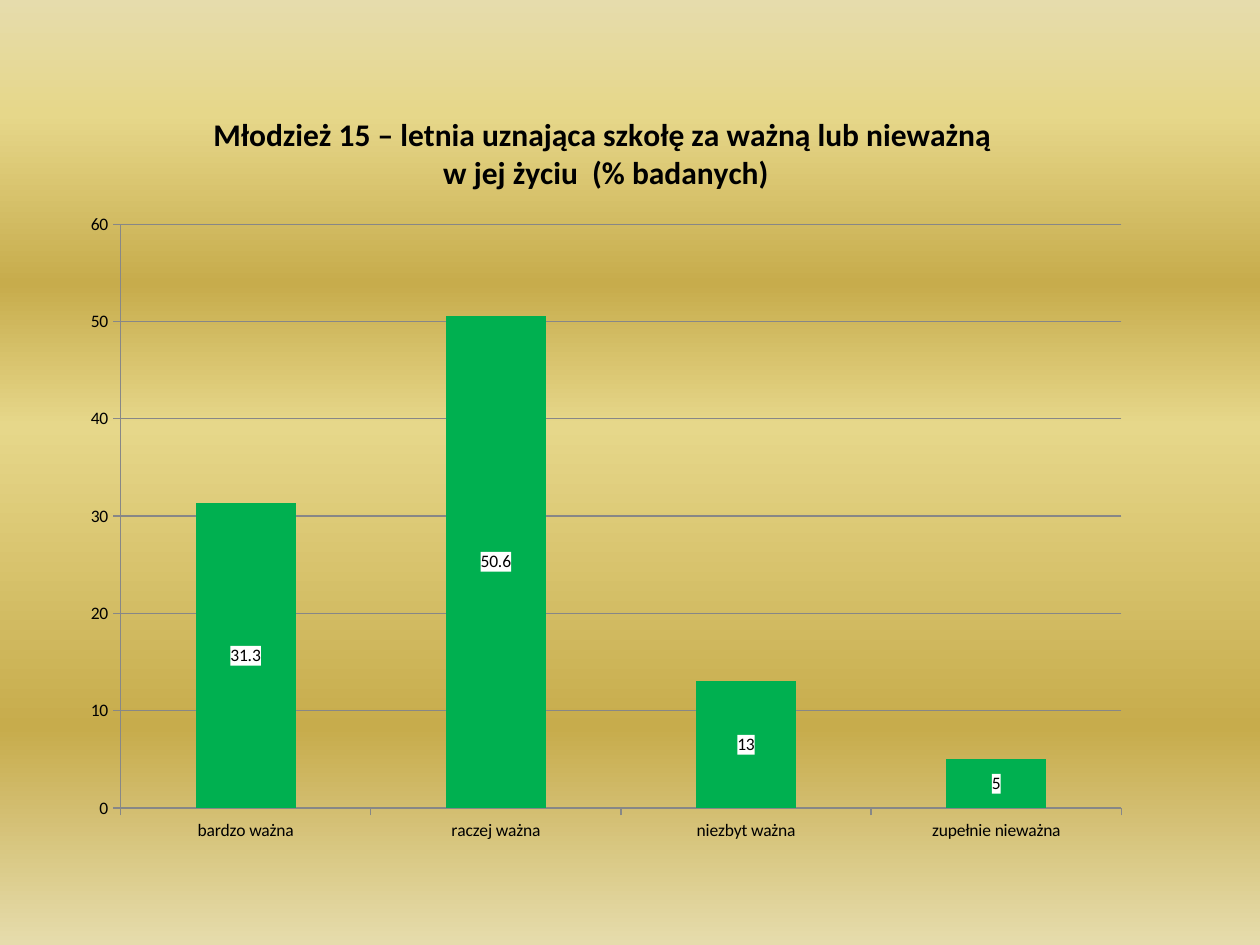
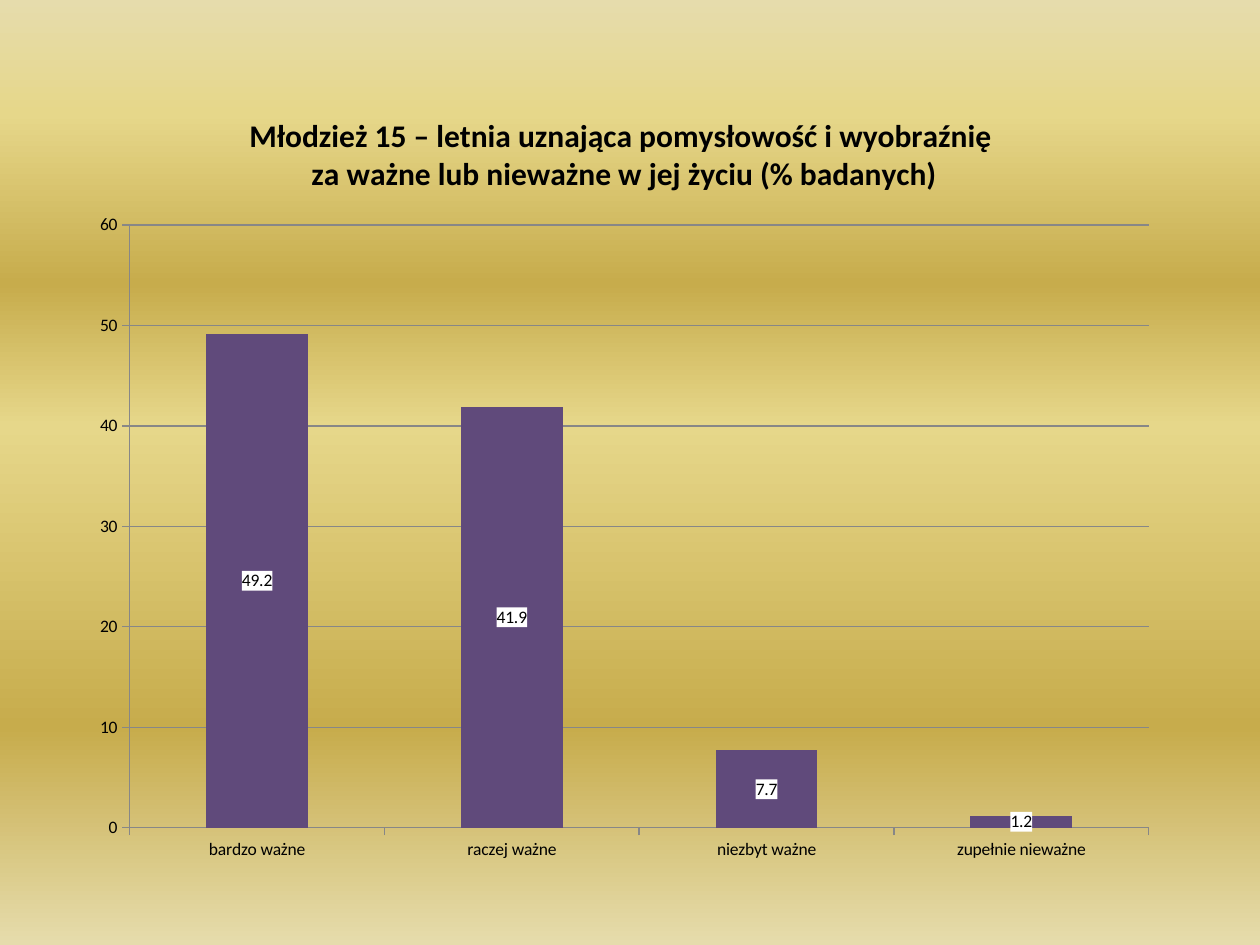
from lxml.etree import SubElement
from pptx import Presentation
from pptx.chart.data import CategoryChartData
from pptx.dml.color import RGBColor
from pptx.enum.chart import XL_CHART_TYPE, XL_TICK_MARK
from pptx.oxml import parse_xml
from pptx.oxml.ns import nsdecls, qn
from pptx.util import Inches, Pt

FONT = "Calibri"
BLACK = RGBColor(0x00, 0x00, 0x00)
GREY = RGBColor(0x87, 0x87, 0x87)
GREEN = RGBColor(0x00, 0xB0, 0x50)
PURPLE = RGBColor(0x60, 0x4A, 0x7B)
SAND = RGBColor(0xE6, 0xDC, 0xAC)
LIGHT_GOLD = RGBColor(0xE6, 0xD7, 0x8A)
DARK_GOLD = RGBColor(0xC7, 0xAC, 0x4C)

GOLD_BANDS = [(0, SAND), (12, LIGHT_GOLD), (30, DARK_GOLD),
              (45, LIGHT_GOLD), (77, DARK_GOLD), (100, SAND)]

SURVEYS = [
    {
        "title": ["Młodzież 15 – letnia uznająca szkołę za ważną lub nieważną ",
                  "w jej życiu  (% badanych)"],
        "answers": {"bardzo ważna": 31.3, "raczej ważna": 50.6,
                    "niezbyt ważna": 13, "zupełnie nieważna": 5},
        "color": GREEN,
        "place": (0.55, 0.7, 8.52, 6.09),
    },
    {
        "title": ["Młodzież 15 – letnia uznająca pomysłowość i wyobraźnię ",
                  "za ważne lub nieważne w jej życiu (% badanych)"],
        "answers": {"bardzo ważne": 49.2, "raczej ważne": 41.9,
                    "niezbyt ważne": 7.7, "zupełnie nieważne": 1.2},
        "color": PURPLE,
        "place": (0.62, 0.7, 8.67, 6.25),
    },
]


def paint_background(master):
    fill = master.background.fill
    fill.gradient()
    fill.gradient_angle = 270
    stops = master.element.find(".//" + qn("p:bgPr")).find(".//" + qn("a:gsLst"))
    for stop in list(stops):
        stops.remove(stop)
    for percent, color in GOLD_BANDS:
        stop = SubElement(stops, qn("a:gs"), pos=str(percent * 1000))
        SubElement(stop, qn("a:srgbClr"), val=str(color))


def style_font(font, size, bold=False):
    font.name = FONT
    font.size = Pt(size)
    font.bold = bold
    font.color.rgb = BLACK


def write_title(chart, lines):
    frame = chart.chart_title.text_frame
    for number, line in enumerate(lines):
        paragraph = frame.add_paragraph() if number else frame.paragraphs[0]
        run = paragraph.add_run()
        run.text = line
        style_font(run.font, 18, bold=True)
    chart.chart_title.include_in_layout = False


def style_axes(chart):
    for axis in (chart.category_axis, chart.value_axis):
        axis.major_tick_mark = XL_TICK_MARK.OUTSIDE
        axis.format.line.color.rgb = GREY
        axis.format.line.width = Pt(0.75)
    gridlines = chart.value_axis.major_gridlines.format.line
    gridlines.color.rgb = GREY
    gridlines.width = Pt(0.75)


def label_values(plot):
    """Show each value on a white box."""
    plot.has_data_labels = True
    labels = plot.data_labels
    labels.show_value = True
    style_font(labels.font, 10)
    white_box = parse_xml(
        f'<c:spPr {nsdecls("c", "a")}><a:solidFill>'
        '<a:srgbClr val="FFFFFF"/></a:solidFill></c:spPr>')
    labels.font  # creates the text properties that the box must precede
    plot_labels = chart_labels(plot)
    plot_labels.find(qn("c:txPr")).addprevious(white_box)


def chart_labels(plot):
    return next(plot._element.iter(qn("c:dLbls")))


def add_survey(slide, survey):
    data = CategoryChartData()
    data.categories = list(survey["answers"])
    data.add_series("Series 1", list(survey["answers"].values()))
    chart = slide.shapes.add_chart(
        XL_CHART_TYPE.COLUMN_STACKED, *map(Inches, survey["place"]), data).chart
    chart.has_legend = False
    style_font(chart.font, 10)
    write_title(chart, survey["title"])
    style_axes(chart)

    plot = chart.plots[0]
    plot.gap_width = 150
    plot.overlap = 100
    plot.vary_by_categories = False
    bars = plot.series[0].format.fill
    bars.solid()
    bars.fore_color.rgb = survey["color"]
    label_values(plot)


def main():
    prs = Presentation()
    prs.slide_width, prs.slide_height = Inches(10), Inches(7.5)
    paint_background(prs.slide_master)
    for survey in SURVEYS:
        add_survey(prs.slides.add_slide(prs.slide_layouts[6]), survey)
    prs.save("out.pptx")


if __name__ == "__main__":
    main()
